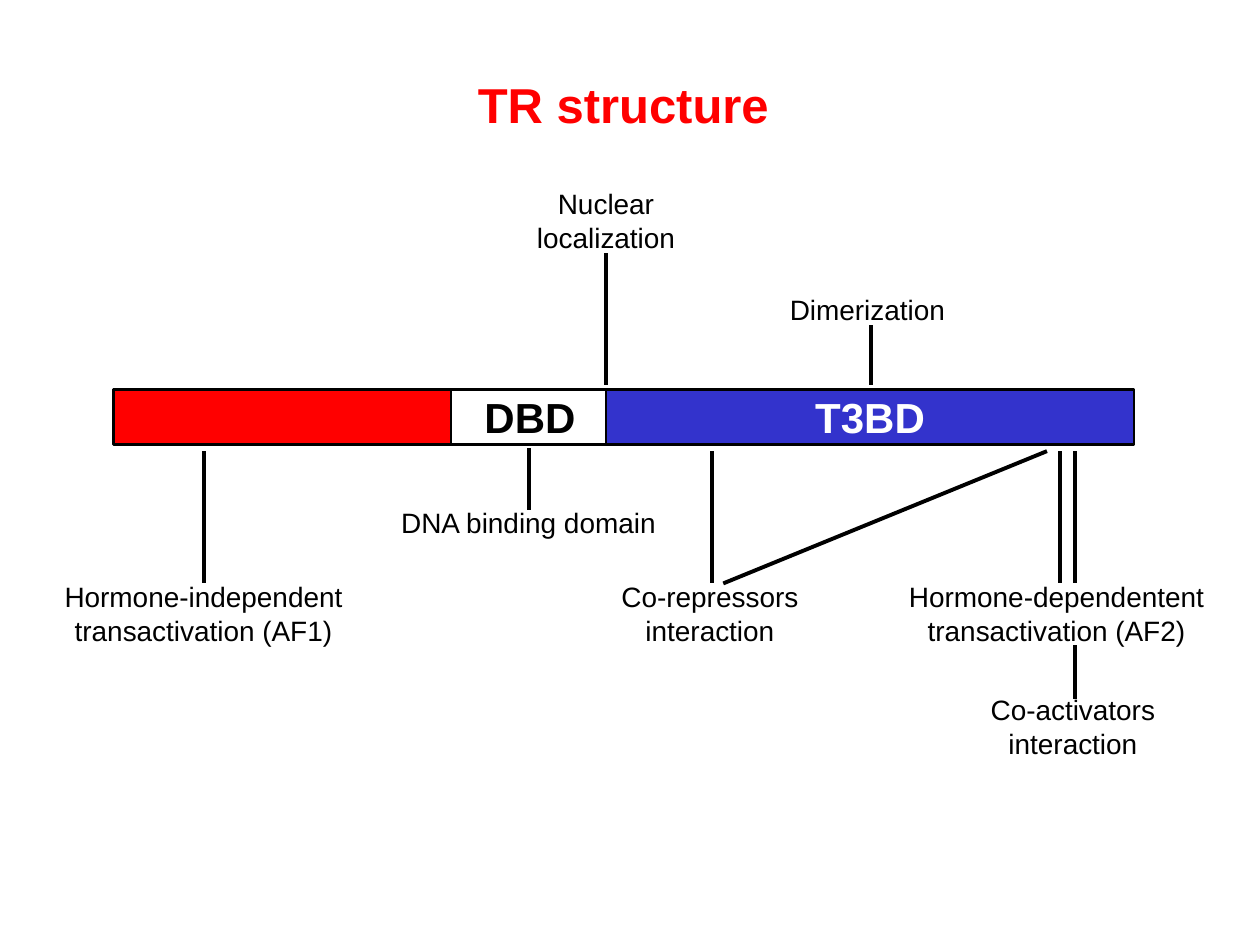
from lxml import etree
from pptx import Presentation
from pptx.dml.color import RGBColor
from pptx.enum import shapes, text
from pptx.oxml.ns import qn
from pptx.util import Pt

BLACK, WHITE, RED, BLUE = "000000", "FFFFFF", "FF0000", "3333CC"


def color(hex_value):
    return RGBColor.from_string(hex_value)


class Diagram:
    font = "Arial"
    label_size, domain_size, title_size = 16, 24, 28
    outline, pointer = 1.5, 2.25

    def __init__(self, slide):
        self.slide = slide

    def set_text(self, shape, wording, size, hue=BLACK, bold=False, **frame_format):
        """Fill a shape with centred text, one paragraph per line."""
        frame = shape.text_frame
        for name, value in frame_format.items():
            setattr(frame, name, value)
        frame.text = wording
        font_format = {"name": self.font, "size": Pt(size), "bold": bold}
        for paragraph in frame.paragraphs:
            paragraph.alignment = text.PP_ALIGN.CENTER
            for run in paragraph.runs:
                for name, value in font_format.items():
                    setattr(run.font, name, value)
                run.font.color.rgb = color(hue)

    def title(self, wording, left, top, width, height):
        title = self.slide.shapes.title
        place = {"left": left, "top": top, "width": width, "height": height}
        for name, value in place.items():
            setattr(title, name, Pt(value))
        self.set_text(title, wording, self.title_size, RED, True,
                      vertical_anchor=text.MSO_ANCHOR.MIDDLE)

    def domain(self, wording, left, width, fill, hue):
        bar = self.slide.shapes.add_shape(
            shapes.MSO_SHAPE.RECTANGLE, Pt(left), Pt(222.5), Pt(width), Pt(31.7))
        bar.shadow.inherit = False
        bar.fill.solid()
        bar.fill.fore_color.rgb = color(fill)
        bar.line.color.rgb = color(BLACK)
        bar.line.width = Pt(self.outline)
        if wording:
            self.set_text(bar, wording, self.domain_size, hue, True, word_wrap=False,
                          vertical_anchor=text.MSO_ANCHOR.MIDDLE)

    def label(self, wording, center, top, width):
        height = 26.6 + 19.4 * wording.count("\n")
        box = self.slide.shapes.add_textbox(
            Pt(center - width / 2), Pt(top), Pt(width), Pt(height))
        self.set_text(box, wording, self.label_size, word_wrap=False,
                      auto_size=text.MSO_AUTO_SIZE.SHAPE_TO_FIT_TEXT)

    def line(self, x1, y1, x2, y2):
        line = self.slide.shapes.add_connector(
            shapes.MSO_CONNECTOR.STRAIGHT, Pt(x1), Pt(y1), Pt(x2), Pt(y2))
        line.line.color.rgb = color(BLACK)
        line.line.width = Pt(self.pointer)
        etree.SubElement(line._element.spPr, qn("a:effectLst"))


def main():
    deck = Presentation()
    deck.slide_width, deck.slide_height = Pt(720), Pt(540)
    diagram = Diagram(deck.slides.add_slide(deck.slide_layouts[5]))
    diagram.title("TR structure ", 54, 31.7, 612, 55.4)

    for domain in [("", 64.8, 193, RED, WHITE),
                   ("DBD", 257.8, 90, WHITE, BLACK),
                   ("T3BD", 346.3, 301.7, BLUE, WHITE)]:
        diagram.domain(*domain)

    above, below, function_row = 220.3, 257.8, 333.4
    for x in (116.6, 406.8, 605.5, 614.2):
        diagram.line(x, below, x, function_row)
    diagram.line(413.3, function_row, 598.3, below)
    for x, start, end in [(302.4, 256.3, 291.6), (614.2, 368.6, 399.6),
                          (346.3, 144.7, above), (497.5, 185.8, above)]:
        diagram.line(x, start, x, end)

    for label in [("DNA binding domain", 302, 285.1, 160.6),
                  ("Hormone-independent\ntransactivation (AF1)", 116.3, 327.6, 173.5),
                  ("Hormone-dependentent\ntransactivation (AF2)", 603.7, 327.6, 183.6),
                  ("Co-repressors\ninteraction", 405.7, 327.6, 116),
                  ("Co-activators\ninteraction", 613.1, 392.4, 108.7),
                  ("Nuclear\nlocalization", 346.3, 103, 93.6),
                  ("Dimerization", 495.7, 163.4, 103)]:
        diagram.label(*label)

    deck.save("out.pptx")


if __name__ == "__main__":
    main()
